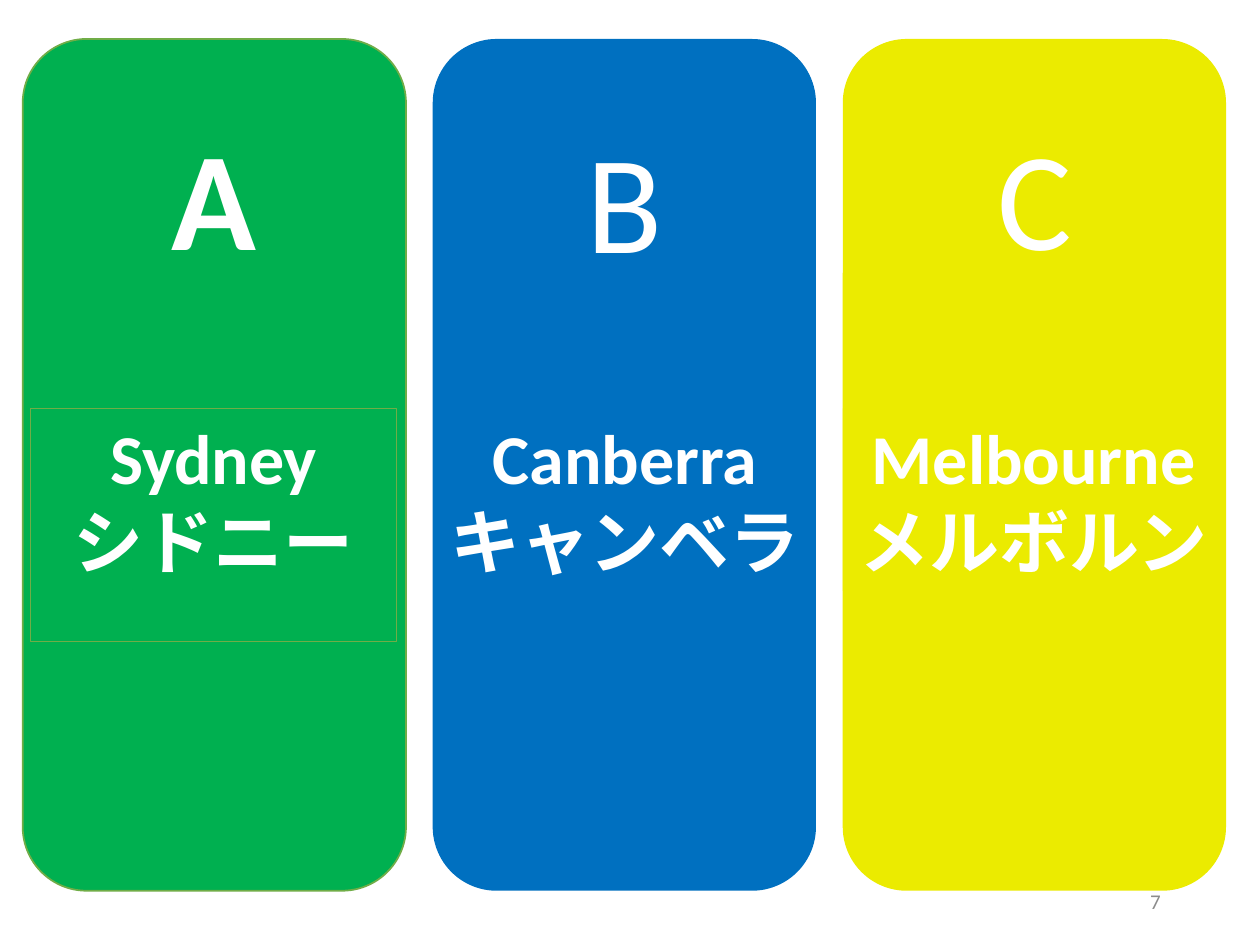
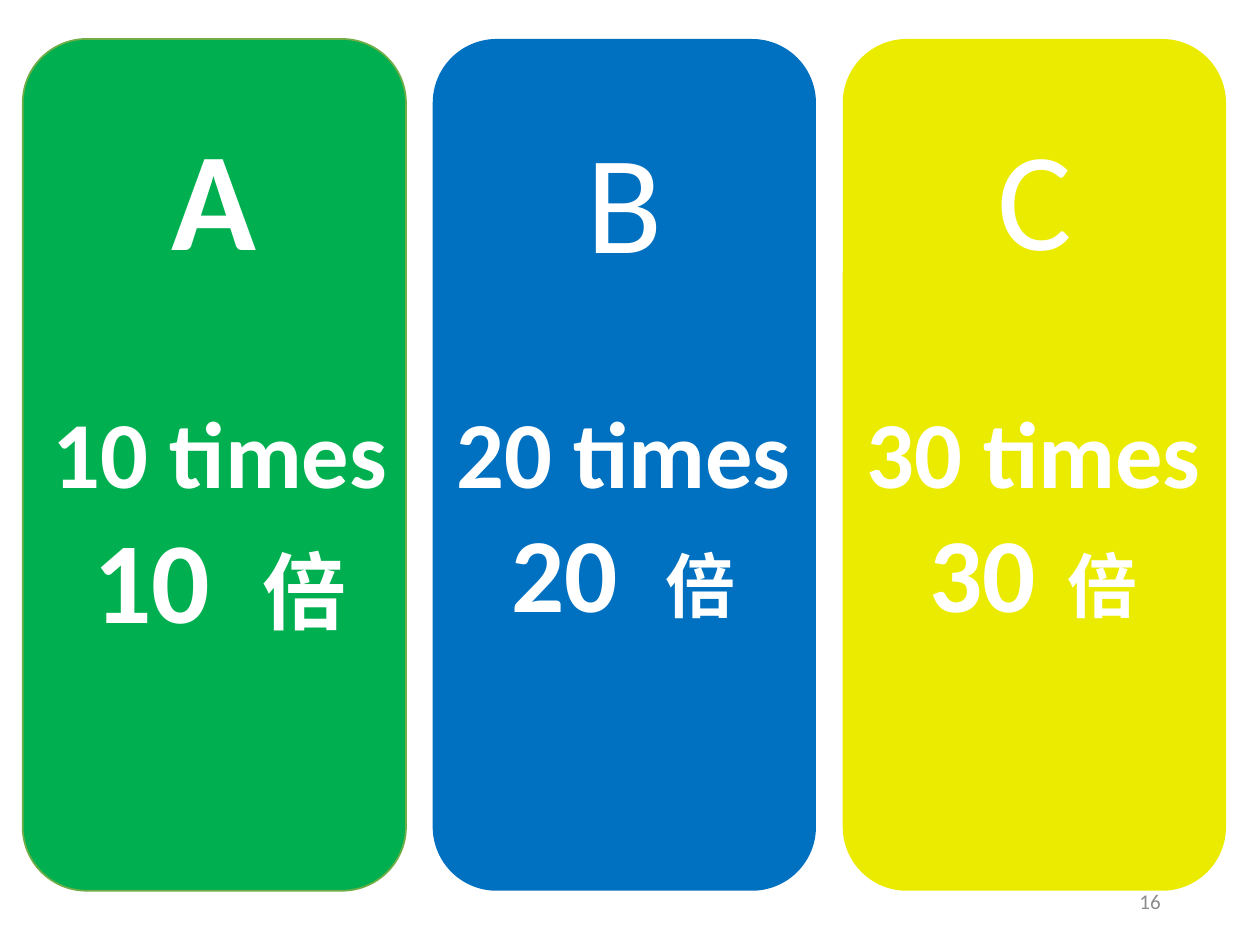
from collections import namedtuple

from pptx import Presentation
from pptx.dml.color import RGBColor
from pptx.enum.shapes import MSO_SHAPE as Shape
from pptx.enum.text import MSO_ANCHOR as Anchor, PP_ALIGN as Align
from pptx.util import Pt

FONT = "Calibri"
WHITE, GREY, OLIVE = "FFFFFF", "8C8C8C", "70AD47"

# The three answer panels, side by side at an equal pitch
Panel = namedtuple("Panel", "letter fill line bold inset")
PANELS = [
    Panel("A", "00B050", OLIVE, True, 30),
    Panel("B", "0070C0", None, False, 32),
    Panel("C", "EBEB00", None, False, 30),
]
PANEL_LEFT, PANEL_TOP, PANEL_PITCH = 13, 22.3, 234.3
PANEL_WIDTH, PANEL_HEIGHT = 219, 486.7

# Captions: text, then left offset, width and height inside the panel
CITIES = [
    ("Sydney", "シドニー", 4.3, 209.5, 133.2),
    ("Canberra", "キャンベラ", 0.7, 218.2, 133.2),
    ("Melbourne", "メルボルン", 0, 218.2, 104.4),
]
# Multiples: number, sizes of number, gap and unit, then left offset and height
MULTIPLES = [
    ("10", 66, 66, 48, 8, 181.4),
    ("20", 60, 60, 40, 4.3, 174.2),
    ("30", 60, 40, 40, 4.3, 174.2),
]
SPACE_WIDTH = 0.226  # width of a space, in ems


def color(value):
    return RGBColor.from_string(value)


def add_run(paragraph, text, size=40, fill=WHITE, bold=False, spacing=0):
    run = paragraph.add_run()
    run.text = text
    run.font.name = FONT
    run.font.size = Pt(size)
    run.font.bold = bold
    run.font.color.rgb = color(fill)
    if spacing:
        run._r.get_or_add_rPr().set("spc", str(round(spacing * 100)))


def write(shape, lines, align=Align.CENTER, anchor=Anchor.TOP, **style):
    """Fill a shape with lines, each a list of (text, own format) runs."""
    frame = shape.text_frame
    frame.word_wrap = True
    frame.vertical_anchor = anchor
    for index, runs in enumerate(lines):
        paragraph = frame.add_paragraph() if index else frame.paragraphs[0]
        paragraph.alignment = align
        for text, own in runs:
            add_run(paragraph, text, **{**style, **own})


def add_block(shapes, kind, box, fill, line=None, line_width=1):
    shape = shapes.add_shape(kind, *map(Pt, box))
    shape.shadow.inherit = False
    shape.fill.solid()
    shape.fill.fore_color.rgb = color(fill)
    if line:
        shape.line.color.rgb = color(line)
        shape.line.width = Pt(line_width)
    else:
        shape.line.fill.background()
    return shape


def add_panel(shapes, panel, left, top):
    box = (left, top, PANEL_WIDTH, PANEL_HEIGHT)
    shape = add_block(shapes, Shape.ROUNDED_RECTANGLE, box, panel.fill, panel.line)
    shape.text_frame.margin_top = Pt(panel.inset)
    write(shape, [[(panel.letter, {})]], size=80, bold=panel.bold)


def add_city(shapes, panel, left, top, city):
    english, japanese, offset, width, height = city
    box = (left + offset, top + 211, width, height)
    shape = add_block(shapes, Shape.RECTANGLE, box, panel.fill, panel.line, 0.75)
    write(shape, [[(english, {})], [(japanese, {})]], size=40, bold=True)


def add_multiple(shapes, left, top, multiple):
    number, number_size, gap_size, unit_size, offset, height = multiple
    box = (left + offset, top + 199.4, 209.5, height)
    shape = shapes.add_textbox(*map(Pt, box))
    gap = {"size": gap_size, "spacing": gap_size * SPACE_WIDTH}
    write(shape, [
        [(f"{number} times", {"size": 54})],
        [(number, {"size": number_size}), (" ", gap), ("倍", {"size": unit_size})],
    ], bold=True)


def add_page_number(slide, number):
    shape = slide.shapes.add_textbox(Pt(508.3), Pt(500.4), Pt(162), Pt(28.8))
    write(shape, [[(str(number), {})]], align=Align.RIGHT,
          anchor=Anchor.MIDDLE, size=12, fill=GREY)


def panel_places():
    for index, panel in enumerate(PANELS):
        yield panel, PANEL_LEFT + index * PANEL_PITCH, PANEL_TOP


def build_city_slide(slide):
    for (panel, left, top), city in zip(panel_places(), CITIES):
        group = slide.shapes.add_group_shape()
        add_panel(group.shapes, panel, left, top)
        add_city(group.shapes, panel, left, top, city)
    add_page_number(slide, 7)


def build_multiple_slide(slide):
    for (panel, left, top), multiple in zip(panel_places(), MULTIPLES):
        add_panel(slide.shapes, panel, left, top)
        add_multiple(slide.shapes, left, top, multiple)
    add_page_number(slide, 16)


def main():
    presentation = Presentation()
    presentation.slide_width, presentation.slide_height = Pt(720), Pt(540)
    blank = presentation.slide_layouts[6]
    for build in (build_city_slide, build_multiple_slide):
        build(presentation.slides.add_slide(blank))
    presentation.save("out.pptx")


if __name__ == "__main__":
    main()
